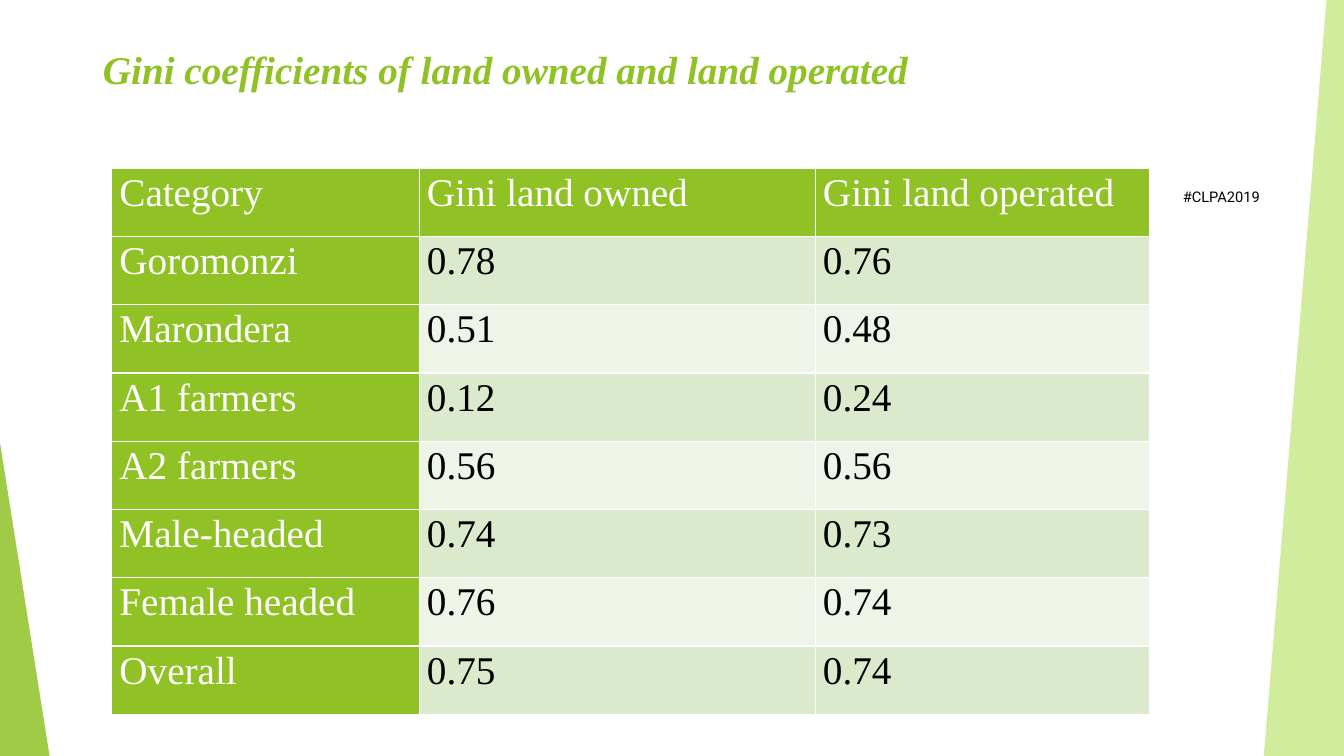
from lxml import etree
from pptx import Presentation
from pptx.dml.color import RGBColor
from pptx.enum.shapes import MSO_SHAPE
from pptx.enum.text import MSO_ANCHOR, PP_ALIGN
from pptx.oxml import parse_xml
from pptx.oxml.ns import nsdecls, qn
from pptx.util import Cm, Pt

TRIANGLE = MSO_SHAPE.ISOSCELES_TRIANGLE
TOP = MSO_ANCHOR.TOP
LEFT, JUSTIFY = PP_ALIGN.LEFT, PP_ALIGN.JUSTIFY

GREEN = RGBColor(0x90, 0xC2, 0x26)
LIGHT_GREEN = RGBColor(0xC0, 0xE4, 0x74)
BAND_DARK = RGBColor(0xDB, 0xE9, 0xCD)
BAND_LIGHT = RGBColor(0xEE, 0xF4, 0xE8)
WHITE = RGBColor(0xFF, 0xFF, 0xFF)
BLACK = RGBColor(0, 0, 0)
SERIF = "Times New Roman"


def add_run(paragraph, text, font, size, color):
    run = paragraph.add_run()
    run.text = text
    run.font.name = font
    run.font.size = Pt(size)
    run.font.color.rgb = color
    return run


def fill_translucent(shape, color, opacity):
    shape.shadow.inherit = False
    shape.line.fill.background()
    shape.fill.solid()
    shape.fill.fore_color.rgb = color
    srgb = shape.fill._xPr.find(".//" + qn("a:srgbClr"))
    etree.SubElement(srgb, qn("a:alpha")).set("val", str(opacity * 1000))


prs = Presentation()
prs.slide_width, prs.slide_height = Cm(33.87), Cm(19.05)
slide = prs.slides.add_slide(prs.slide_layouts[5])

# Green wedges on the right and left edges
outline = slide.shapes.build_freeform(Cm(33.43), 0)
outline.add_line_segments(
    [(Cm(33.87), 0), (Cm(33.87), Cm(19.05)), (Cm(31.85), Cm(19.05))], close=True)
right_wedge = outline.convert_to_shape()
fill_translucent(right_wedge, LIGHT_GREEN, 70)

left_wedge = slide.shapes.add_shape(TRIANGLE, 0, Cm(11.15), Cm(1.25), Cm(7.9))
left_wedge.adjustments[0] = 0
fill_translucent(left_wedge, GREEN, 85)

# Conference hashtag
hashtag = slide.shapes.add_textbox(Cm(29.46), Cm(4.62), Cm(3.4), Cm(0.71))
hashtag.text_frame.word_wrap = True
hashtag.text_frame.margin_left = Cm(0.35)
add_run(hashtag.text_frame.paragraphs[0], "#CLPA2019", "Roboto", 10.5, BLACK)

# Title
title = slide.shapes.title
title.left, title.top, title.width, title.height = Cm(2.34), Cm(1.02), Cm(29.2), Cm(2.34)
title.text_frame.vertical_anchor = TOP
heading = title.text_frame.paragraphs[0]
heading.alignment = LEFT
heading_run = add_run(
    heading, "Gini coefficients of land owned and land operated", SERIF, 28, GREEN)
heading_run.font.bold = True
heading_run.font.italic = True

# Table of Gini coefficients
gini_rows = [
    ("Category", "Gini land owned", "Gini land operated"),
    ("Goromonzi", "0.78", "0.76"),
    ("Marondera", "0.51", "0.48"),
    ("A1 farmers", "0.12", "0.24"),
    ("A2 farmers", "0.56", "0.56"),
    ("Male-headed", "0.74", "0.73"),
    ("Female headed", "0.76", "0.74"),
    ("Overall", "0.75", "0.74"),
]
column_widths = [7.75, 9.98, 8.43]
row_height = 1.72
gini_table = slide.shapes.add_table(
    len(gini_rows), len(column_widths), Cm(2.82), Cm(4.24),
    Cm(sum(column_widths)), Cm(row_height * len(gini_rows))).table
gini_table.first_col = True
for column, width in zip(gini_table.columns, column_widths):
    column.width = Cm(width)

for r, values in enumerate(gini_rows):
    gini_table.rows[r].height = Cm(row_height)
    for c, value in enumerate(values):
        cell = gini_table.cell(r, c)
        is_label = r == 0 or c == 0
        cell.margin_left = cell.margin_right = Cm(0.19)
        cell.margin_top = cell.margin_bottom = 0

        # White borders come before the fill in the cell properties
        properties = cell._tc.get_or_add_tcPr()
        for side in ("lnL", "lnR", "lnT", "lnB"):
            properties.append(parse_xml(
                f'<a:{side} {nsdecls("a")} w="{Pt(1)}"><a:solidFill>'
                f'<a:srgbClr val="{WHITE}"/></a:solidFill></a:{side}>'))
        cell.fill.solid()
        band = BAND_DARK if r % 2 else BAND_LIGHT
        cell.fill.fore_color.rgb = GREEN if is_label else band

        entry = cell.text_frame.paragraphs[0]
        entry.alignment = JUSTIFY
        entry.line_spacing = 1.07
        entry_run = add_run(entry, value, SERIF, 28, WHITE if is_label else BLACK)
        entry_run.font.bold = False

prs.save("out.pptx")
